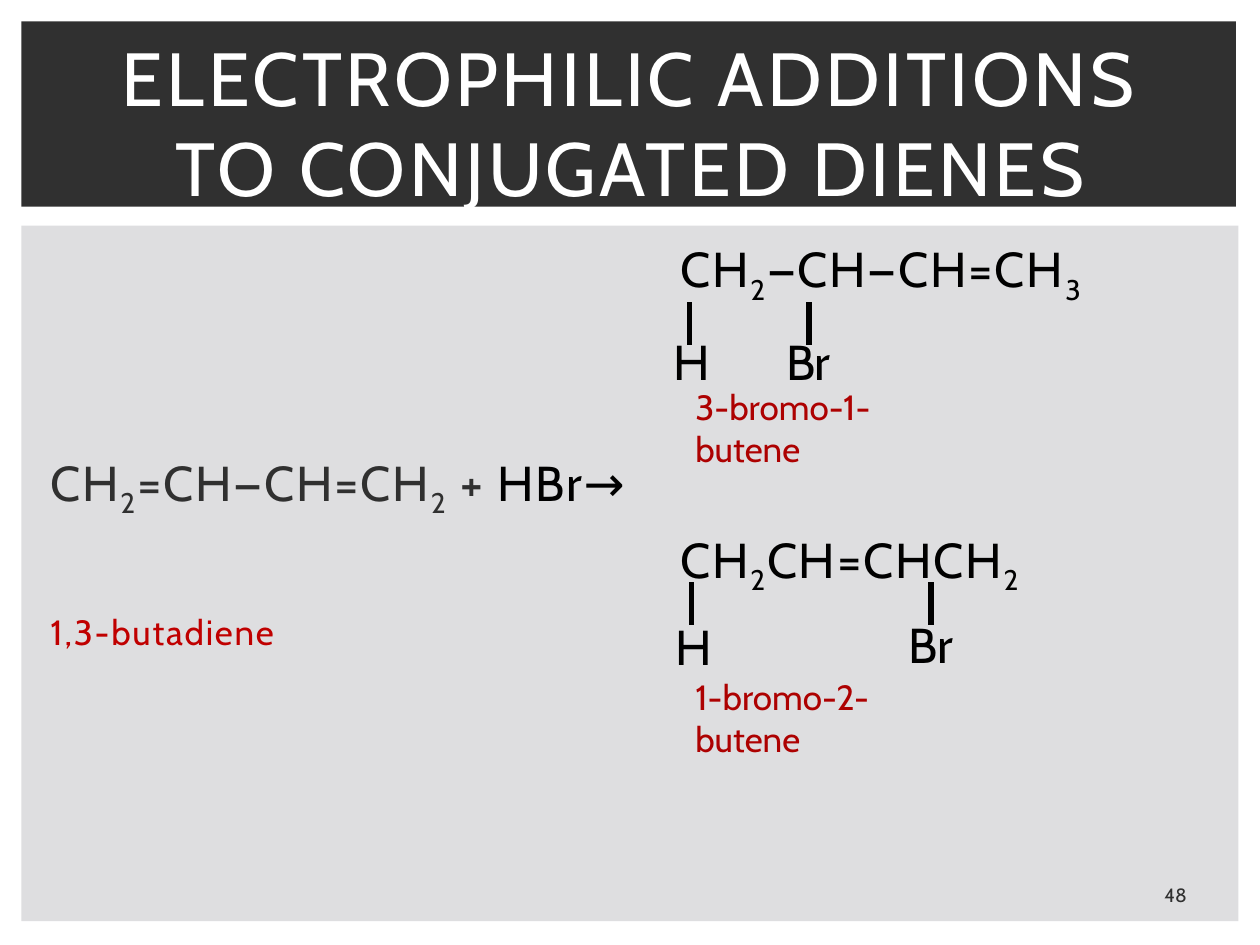
from dataclasses import dataclass

from pptx import Presentation
from pptx.dml.color import RGBColor
from pptx.enum.shapes import MSO_CONNECTOR, MSO_SHAPE
from pptx.enum.text import MSO_ANCHOR, MSO_AUTO_SIZE, PP_ALIGN
from pptx.oxml.ns import qn
from pptx.util import Inches, Pt


@dataclass(frozen=True)
class Theme:
    font: str = "Cabin"
    dark: str = "303030"
    panel: str = "DEDEE0"
    white: str = "FFFFFF"
    black: str = "000000"
    label: str = "AD0101"
    reactant: str = "C00000"
    title_size: int = 43
    formula_size: int = 28
    label_size: int = 20
    number_size: int = 11


theme = Theme()


def style(span, size, color, spacing=0):
    span.font.name = theme.font
    span.font.size = Pt(size)
    span.font.color.rgb = RGBColor.from_string(color)
    if spacing:
        span.font._element.set("spc", str(spacing * 100))


def add_text(page, text, place, size, color, wrap=False):
    box = page.shapes.add_textbox(*map(Inches, place))
    box.text_frame.word_wrap = wrap
    box.text_frame.text = text
    style(box.text_frame.paragraphs[0].runs[0], size, color)
    return box


deck = Presentation()
deck.slide_width = Inches(10)
deck.slide_height = Inches(7.5)
page = deck.slides.add_slide(deck.slide_layouts[1])

panels = [
    ((0.17, 1.79, 9.66, 5.52), theme.panel),
    ((0.17, 0.17, 9.64, 1.47), theme.dark),
]
for place, color in panels:
    panel = page.shapes.add_shape(MSO_SHAPE.RECTANGLE, *map(Inches, place))
    panel.shadow.inherit = False
    panel.fill.solid()
    panel.fill.fore_color.rgb = RGBColor.from_string(color)
    panel.line.fill.background()
    panel._element.getparent().insert(2, panel._element)

title = page.shapes.title
title.left, title.top, title.width, title.height = map(Inches, (0.42, 0.39, 9.17, 1.15))
title.text_frame.text = "ELECTROPHILIC ADDITIONS TO CONJUGATED DIENES"
title.text_frame.auto_size = MSO_AUTO_SIZE.NONE
title.text_frame.vertical_anchor = MSO_ANCHOR.MIDDLE
title.text_frame.paragraphs[0].alignment = PP_ALIGN.CENTER
style(title.text_frame.paragraphs[0].runs[0], theme.title_size, theme.white, 2)

body = page.placeholders[1]
body.left, body.top, body.width, body.height = map(Inches, (0.25, 1.96, 9.5, 5.3))
body.text_frame.auto_size = MSO_AUTO_SIZE.NONE
left_column, right_column = 0.05, 5.05
size, black, dark = theme.formula_size, theme.black, theme.dark
lines = [
    (right_column, 0, size, [("CH", black), ("2", black), ("—CH—CH=CH", black), ("3", black)]),
    (left_column, 92, size, [("CH", dark), ("2", dark), ("=CH—CH=CH", dark), ("2", dark),
                             (" + ", dark), ("HBr→", black)]),
    (right_column, 14, size, [("CH", black), ("2", black), ("CH=CHCH", black), ("2", black)]),
    (left_column, 2, theme.label_size, [("1,3-butadiene", theme.reactant)]),
]
for index, (indent, gap, text_size, parts) in enumerate(lines):
    para = body.text_frame.paragraphs[0] if index == 0 else body.text_frame.add_paragraph()
    para.space_before = Pt(gap)
    para.line_spacing = Pt(30)
    properties = para._p.get_or_add_pPr()
    properties.set("marL", str(Inches(indent)))
    properties.set("indent", "0")
    properties.append(properties.makeelement(qn("a:buNone"), {}))
    for text, color in parts:
        span = para.add_run()
        span.text = text
        style(span, text_size, color, 1)
        if text.isdigit():
            span.font._element.set("baseline", "-25000")

for x, top in [(5.47, 2.4), (6.42, 2.4), (5.49, 4.62), (7.39, 4.62)]:
    bond = page.shapes.add_connector(
        MSO_CONNECTOR.STRAIGHT, Inches(x), Inches(top), Inches(x), Inches(top + 0.34))
    bond.line.color.rgb = RGBColor.from_string(theme.black)
    bond.line.width = Pt(3)
    bond_properties = bond._element.spPr
    bond_properties.append(bond_properties.makeelement(qn("a:effectLst"), {}))

atoms = [
    ("H", 5.25, 2.58, 0.45),
    ("Br", 6.14, 2.58, 0.57),
    ("Br", 7.11, 4.83, 0.57),
    ("H", 5.26, 4.84, 0.45),
]
for atom, left, top, width in atoms:
    add_text(page, atom, (left, top, width, 0.57), theme.formula_size, theme.black)

for name, top in [("3-bromo-1-butene", 3.01), ("1-bromo-2-butene", 5.31)]:
    add_text(page, name, (5.42, top, 1.8, 0.77), theme.label_size, theme.label, wrap=True)

number = add_text(page, "48", (9.01, 6.95, 0.64, 0.3), theme.number_size, theme.dark, wrap=True)
number.text_frame.vertical_anchor = MSO_ANCHOR.MIDDLE
number.text_frame.paragraphs[0].alignment = PP_ALIGN.CENTER

deck.save("out.pptx")
